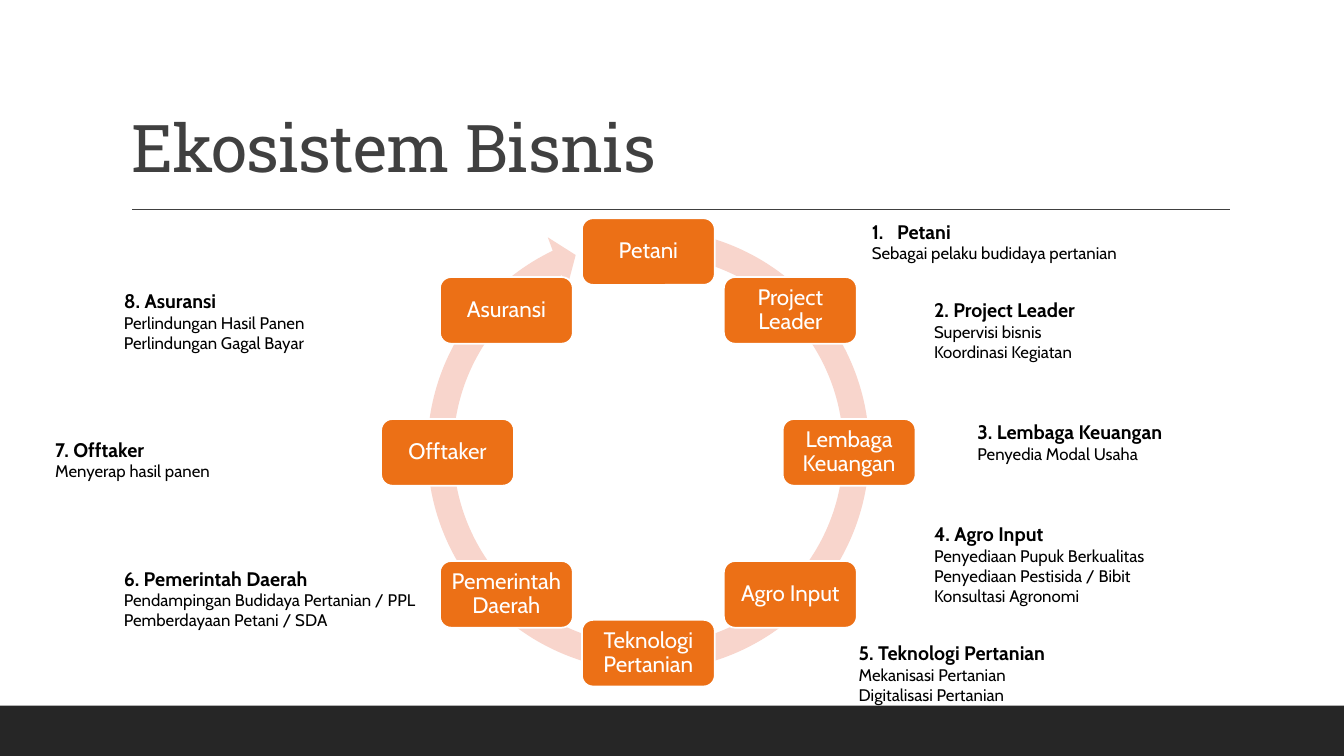
from math import cos, pi, sin

from lxml.etree import SubElement
from pptx import Presentation
from pptx.dml.color import RGBColor
from pptx.enum.shapes import MSO_CONNECTOR as Connector, MSO_SHAPE as Shape
from pptx.enum.text import MSO_ANCHOR as Anchor, MSO_AUTO_SIZE as AutoSize, PP_ALIGN as Align
from pptx.oxml.ns import qn
from pptx.util import Cm, Pt

WHITE = RGBColor(0xFF, 0xFF, 0xFF)
BLACK = RGBColor(0x00, 0x00, 0x00)
GREY = RGBColor(0x40, 0x40, 0x40)
DARK = RGBColor(0x26, 0x26, 0x26)
ORANGE = RGBColor(0xEC, 0x70, 0x16)
PINK = RGBColor(0xF8, 0xD5, 0xCC)

WIDTH, HEIGHT = 33.87, 19.05
CENTRE_X, CENTRE_Y, RADIUS = 16.34, 11.4, 5.06
NODE_WIDTH, NODE_HEIGHT = 3.35, 1.68
RING_SIZE, RING_TOP = 11.86, 5.41
RING_ADJUSTMENTS = (0.055, 3.307, 146.432, 168.777, 0.058)

NODES = ["Petani", "Project Leader", "Lembaga Keuangan", "Agro Input",
         "Teknologi Pertanian", "Pemerintah Daerah", "Offtaker", "Asuransi"]

# Left, top, heading, detail lines
NOTES = [
    (21.72, 5.41, "Petani", ["Sebagai pelaku budidaya pertanian"]),
    (23.29, 7.39, "2. Project Leader", ["Supervisi bisnis", "Koordinasi Kegiatan"]),
    (24.38, 10.46, "3. Lembaga Keuangan", ["Penyedia Modal Usaha"]),
    (23.29, 13.03, "4. Agro Input", ["Penyediaan Pupuk Berkualitas",
                                     "Penyediaan Pestisida / Bibit",
                                     "Konsultasi Agronomi"]),
    (21.39, 16.03, "5. Teknologi Pertanian", ["Mekanisasi Pertanian", "Digitalisasi Pertanian"]),
    (2.87, 14.15, "6. Pemerintah Daerah", ["Pendampingan Budidaya Pertanian / PPL",
                                           "Pemberdayaan Petani / SDA"]),
    (1.14, 10.9, "7. Offtaker", ["Menyerap hasil panen"]),
    (2.87, 7.16, "8. Asuransi", ["Perlindungan Hasil Panen", "Perlindungan Gagal Bayar"]),
]


class SlideBuilder:
    title_font = "Roboto Slab"
    body_font = "Cabin"

    def __init__(self, slide):
        self.slide = slide

    def style(self, paragraph, size, color, name=body_font, bold=False):
        font = paragraph.font
        font.name, font.size, font.bold = name, Pt(size), bold
        font.color.rgb = color

    def title(self, text, left, top, width, height):
        shape = self.slide.shapes.title
        shape.left, shape.top, shape.width, shape.height = map(Cm, (left, top, width, height))
        frame = shape.text_frame
        frame.text = text
        frame.auto_size = AutoSize.NONE
        frame.vertical_anchor = Anchor.BOTTOM
        paragraph = frame.paragraphs[0]
        paragraph.alignment = Align.LEFT
        paragraph.line_spacing = 0.9
        self.style(paragraph, 47, GREY, self.title_font)
        paragraph.runs[0]._r.get_or_add_rPr().set("spc", "-50")

    def shape(self, kind, left, top, width, height, fill):
        shape = self.slide.shapes.add_shape(kind, Cm(left), Cm(top), Cm(width), Cm(height))
        shape.shadow.inherit = False
        shape.fill.solid()
        shape.fill.fore_color.rgb = fill
        shape.line.fill.background()
        return shape

    def rule(self, left, right, y):
        line = self.slide.shapes.add_connector(
            Connector.STRAIGHT, Cm(left), Cm(y), Cm(right), Cm(y))
        line.line.color.rgb = GREY
        line.line.width = Pt(1)
        SubElement(line._element.spPr, qn("a:effectLst"))

    def ring(self, left, top, size):
        ring = self.shape(Shape.CIRCULAR_ARROW, left, top, size, size, PINK)
        for index, value in enumerate(RING_ADJUSTMENTS):
            ring.adjustments[index] = value

    def node(self, text, x, y):
        node = self.shape(Shape.ROUNDED_RECTANGLE, x - NODE_WIDTH / 2, y - NODE_HEIGHT / 2,
                          NODE_WIDTH, NODE_HEIGHT, ORANGE)
        node.line.color.rgb = WHITE
        node.line.width = Pt(1.25)
        frame = node.text_frame
        frame.margin_left = frame.margin_right = Cm(0.18)
        frame.margin_top = frame.margin_bottom = Cm(0.18)
        frame.vertical_anchor = Anchor.MIDDLE
        frame.word_wrap = True
        frame.text = text
        paragraph = frame.paragraphs[0]
        paragraph.alignment = Align.CENTER
        paragraph.line_spacing = 0.9
        self.style(paragraph, 16, WHITE)

    def number(self, paragraph):
        properties = paragraph._p.get_or_add_pPr()
        properties.set("marL", str(Cm(0.64)))
        properties.set("indent", str(-Cm(0.64)))
        SubElement(properties, qn("a:buFont"), typeface="+mj-lt")
        SubElement(properties, qn("a:buAutoNum"), type="arabicPeriod")

    def note(self, left, top, heading, details, numbered):
        box = self.slide.shapes.add_textbox(
            Cm(left), Cm(top), Cm(10.59), Cm(0.86 + 0.51 * len(details)))
        frame = box.text_frame
        frame.word_wrap = True
        frame.auto_size = AutoSize.SHAPE_TO_FIT_TEXT
        frame.text = "\n".join([heading, *details])
        first, *others = frame.paragraphs
        if numbered:
            self.number(first)
        self.style(first, 14, BLACK, bold=True)
        for paragraph in others:
            self.style(paragraph, 12, BLACK)
        for paragraph in frame.paragraphs:
            paragraph.alignment = Align.JUSTIFY


def main():
    presentation = Presentation()
    presentation.slide_width, presentation.slide_height = Cm(WIDTH), Cm(HEIGHT)
    slide = presentation.slides.add_slide(presentation.slide_layouts[5])
    builder = SlideBuilder(slide)

    # Frame and title
    builder.shape(Shape.RECTANGLE, 0, 17.78, WIDTH, HEIGHT - 17.78, DARK)
    builder.rule(3.33, 31, 5.28)
    builder.title("Ekosistem Bisnis", 3.05, 0.79, 27.94, 4.04)

    # Cycle, clockwise from the top
    builder.ring(CENTRE_X - RING_SIZE / 2, RING_TOP, RING_SIZE)
    for index, text in enumerate(NODES):
        angle = 2 * pi * index / len(NODES)
        builder.node(text, CENTRE_X + RADIUS * sin(angle), CENTRE_Y - RADIUS * cos(angle))

    # Notes around the cycle; the first has an automatic number
    for index, (left, top, heading, details) in enumerate(NOTES):
        builder.note(left, top, heading, details, numbered=index == 0)

    presentation.save("out.pptx")


if __name__ == "__main__":
    main()
